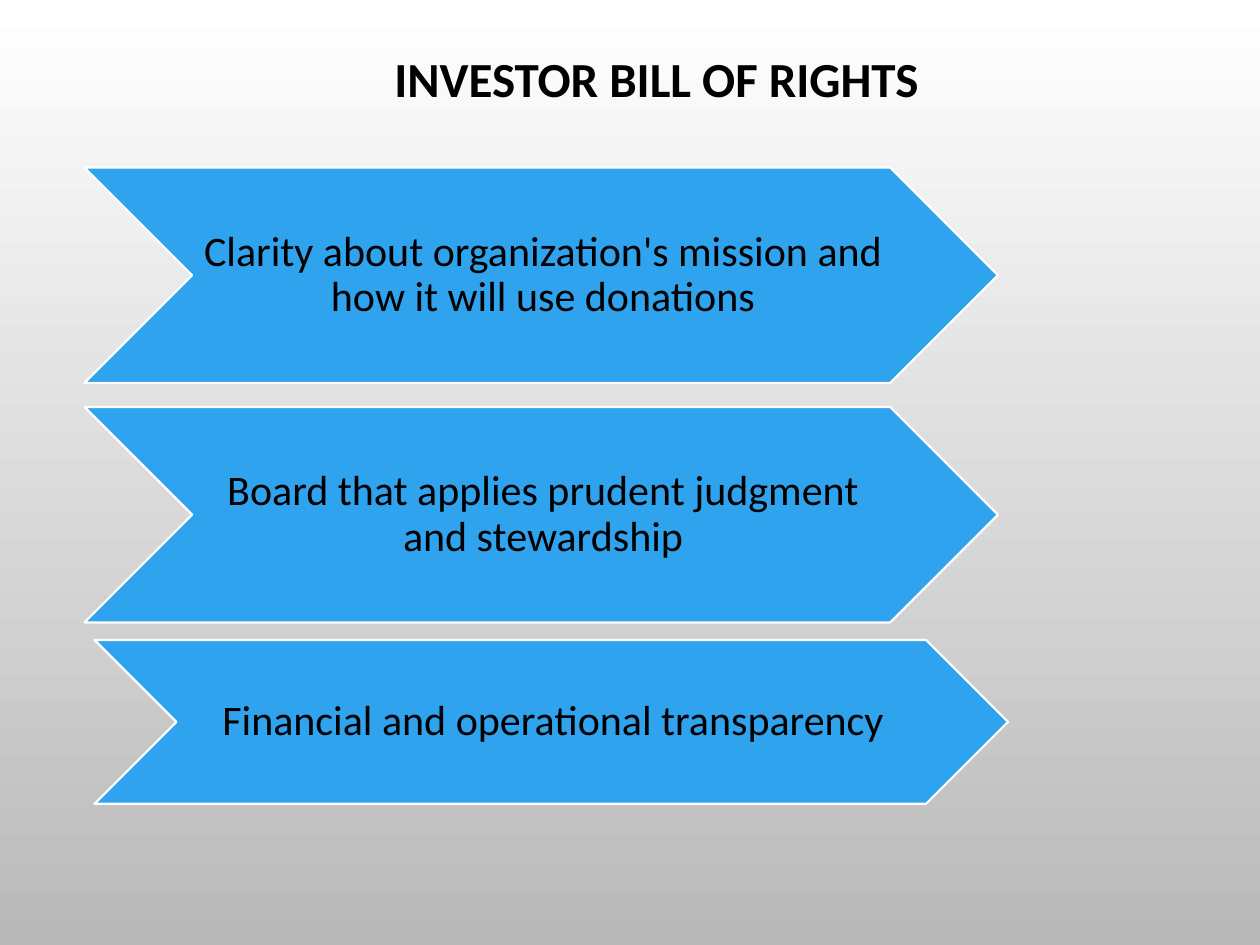
"""Build the Investor Bill of Rights slide with three stacked chevrons."""
from pptx import Presentation
from pptx.dml.color import RGBColor
from pptx.enum.shapes import MSO_SHAPE
from pptx.enum.text import MSO_ANCHOR, PP_ALIGN
from pptx.util import Inches, Pt

CHEVRON = MSO_SHAPE.CHEVRON
MIDDLE = MSO_ANCHOR.MIDDLE
CENTER = PP_ALIGN.CENTER

RIGHTS = [
    ("Clarity about organization's mission and how it will use donations", 0.67, 1.33, 1.71),
    ("Board that applies prudent judgment and stewardship", 0.67, 3.23, 1.71),
    ("Financial and operational transparency", 0.75, 5.08, 1.3),
]
WIDTH = 7.25


def color(code):
    return RGBColor.from_string(code)


def label(text, left, top, width, height, size, bold=False):
    box = slide.shapes.add_textbox(Inches(left), Inches(top), Inches(width), Inches(height))
    frame = box.text_frame
    frame.word_wrap = True
    frame.vertical_anchor = MIDDLE
    line = frame.paragraphs[0]
    line.text = text
    line.alignment = CENTER
    line.line_spacing = 0.9
    line.font.name = "Calibri"
    line.font.size = Pt(size)
    line.font.bold = bold
    line.font.color.rgb = color("000000")
    return frame


deck = Presentation()
deck.slide_width = Inches(10)
deck.slide_height = Inches(7.5)
slide = deck.slides.add_slide(deck.slide_layouts[6])

back = slide.background.fill
back.gradient()
back.gradient_angle = 270
for stop, code in zip(back.gradient_stops, ("FFFFFF", "B9B9B9")):
    stop.color.rgb = color(code)

label("INVESTOR BILL OF RIGHTS", 2.17, 0.25, 6.08, 0.79, 28, True)

for text, left, top, height in RIGHTS:
    arrow = slide.shapes.add_shape(
        CHEVRON, Inches(left), Inches(top), Inches(WIDTH), Inches(height))
    arrow.shadow.inherit = False
    arrow.fill.solid()
    arrow.fill.fore_color.rgb = color("2FA3EE")
    arrow.line.color.rgb = color("FFFFFF")
    arrow.line.width = Pt(1.25)

    frame = label(text, left + height / 2, top, WIDTH - height, height, 24)
    frame.margin_left = Inches(0.03)
    frame.margin_right = Inches(0)
    frame.margin_top = frame.margin_bottom = Inches(0.02)

deck.save("out.pptx")
